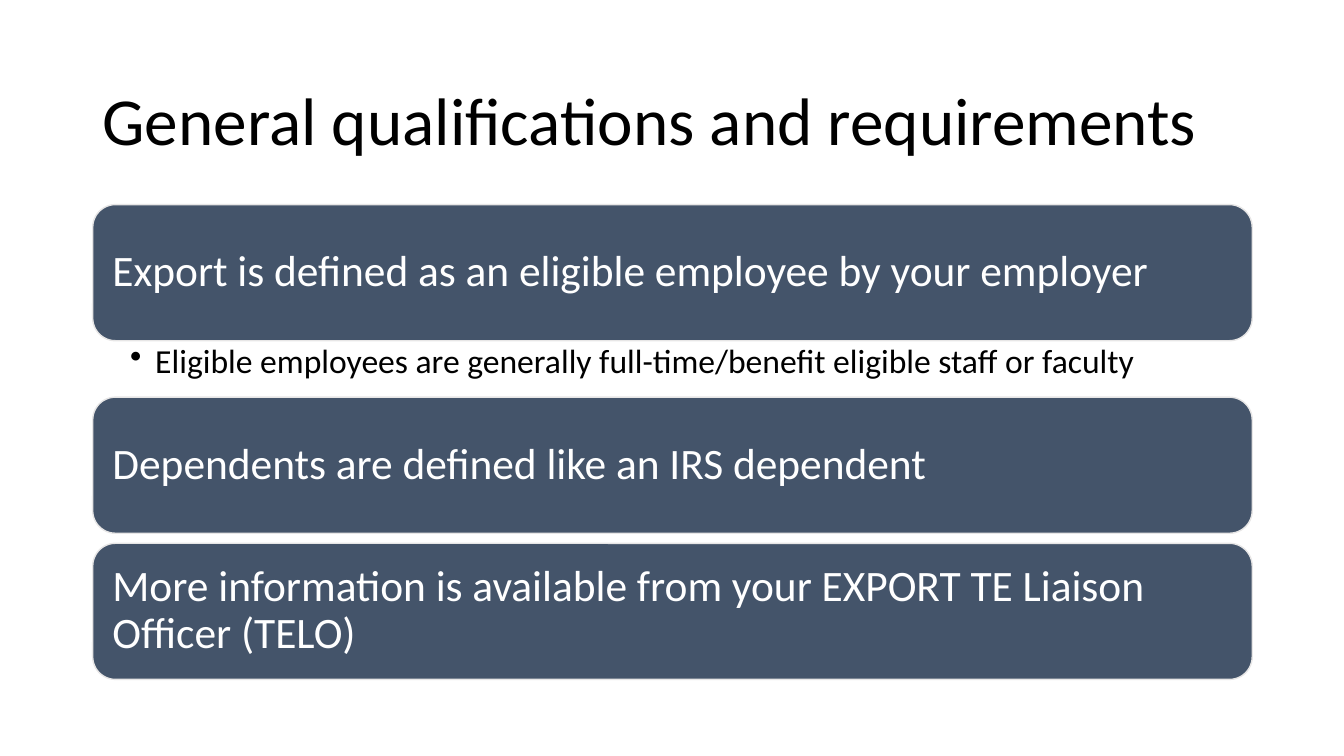
from lxml.etree import SubElement
from pptx import Presentation
from pptx.dml.color import RGBColor
from pptx.enum.shapes import MSO_SHAPE
from pptx.enum.text import MSO_ANCHOR, PP_ALIGN
from pptx.oxml.ns import qn
from pptx.util import Inches, Pt

# Content
TITLE = "General qualifications and requirements"
REQUIREMENTS = [
    ("Export is defined as an eligible employee by your employer",
     "Eligible employees are generally full-time/benefit eligible staff or faculty"),
    ("Dependents are defined like an IRS dependent", None),
    ("More information is available from your EXPORT TE Liaison Officer (TELO)", None),
]

THEME = {
    "font": "Calibri",
    "ink": RGBColor(0x00, 0x00, 0x00),
    "on_bar": RGBColor(0xFF, 0xFF, 0xFF),
    "bar": RGBColor(0x44, 0x54, 0x6A),
    "bar_line": RGBColor(0xE7, 0xE6, 0xE6),
    "title_size": 48,
    "bar_size": 31,
    "detail_size": 24,
}

# Layout in inches
LEFT, WIDTH = 0.92, 11.5
TITLE_TOP, TITLE_HEIGHT = 0.61, 1.24
FIRST_BAR_TOP, BAR_HEIGHT = 2.03, 1.35
DETAIL_HEIGHT, BAR_GAP = 0.56, 0.1
BULLET_INDENT = 0.25


def write_text(holder, text, *, size, color, anchor, insets, bullet=False):
    """Fill a shape or text box; insets are left, top, right, bottom."""
    frame = holder.text_frame
    frame.word_wrap = True
    frame.vertical_anchor = anchor
    (frame.margin_left, frame.margin_top,
     frame.margin_right, frame.margin_bottom) = map(Inches, insets)
    paragraph = frame.paragraphs[0]
    paragraph.alignment = PP_ALIGN.LEFT
    paragraph.line_spacing = 0.9
    run = paragraph.add_run()
    run.text = text
    run.font.name = THEME["font"]
    run.font.size = Pt(size)
    run.font.color.rgb = color
    if bullet:
        paragraph.level = 1
        properties = paragraph._p.get_or_add_pPr()
        properties.set("marL", str(Inches(BULLET_INDENT)))
        properties.set("indent", str(-Inches(BULLET_INDENT)))
        SubElement(properties, qn("a:buChar")).set("char", "•")


def area(top, height):
    return [Inches(length) for length in (LEFT, top, WIDTH, height)]


presentation = Presentation()
presentation.slide_width = Inches(13.33)
presentation.slide_height = Inches(7.5)
slide = presentation.slides.add_slide(presentation.slide_layouts[6])

# Title
title = slide.shapes.add_textbox(*area(TITLE_TOP, TITLE_HEIGHT))
write_text(title, TITLE, size=THEME["title_size"], color=THEME["ink"],
           anchor=MSO_ANCHOR.MIDDLE, insets=(0.1, 0.05, 0.1, 0.05))

# Requirement bars, each with an optional detail line below
top = FIRST_BAR_TOP
for requirement, detail in REQUIREMENTS:
    bar = slide.shapes.add_shape(MSO_SHAPE.ROUNDED_RECTANGLE, *area(top, BAR_HEIGHT))
    bar.shadow.inherit = False
    bar.fill.solid()
    bar.fill.fore_color.rgb = THEME["bar"]
    bar.line.color.rgb = THEME["bar_line"]
    bar.line.width = Pt(1)
    write_text(bar, requirement, size=THEME["bar_size"], color=THEME["on_bar"],
               anchor=MSO_ANCHOR.MIDDLE, insets=(0.13, 0.13, 0.13, 0.13))
    top += BAR_HEIGHT
    if detail:
        detail_line = slide.shapes.add_textbox(*area(top, DETAIL_HEIGHT))
        write_text(detail_line, detail, size=THEME["detail_size"], color=THEME["ink"],
                   anchor=MSO_ANCHOR.TOP, insets=(0.37, 0.04, 0.24, 0.04), bullet=True)
        top += DETAIL_HEIGHT
    else:
        top += BAR_GAP

presentation.save("out.pptx")
